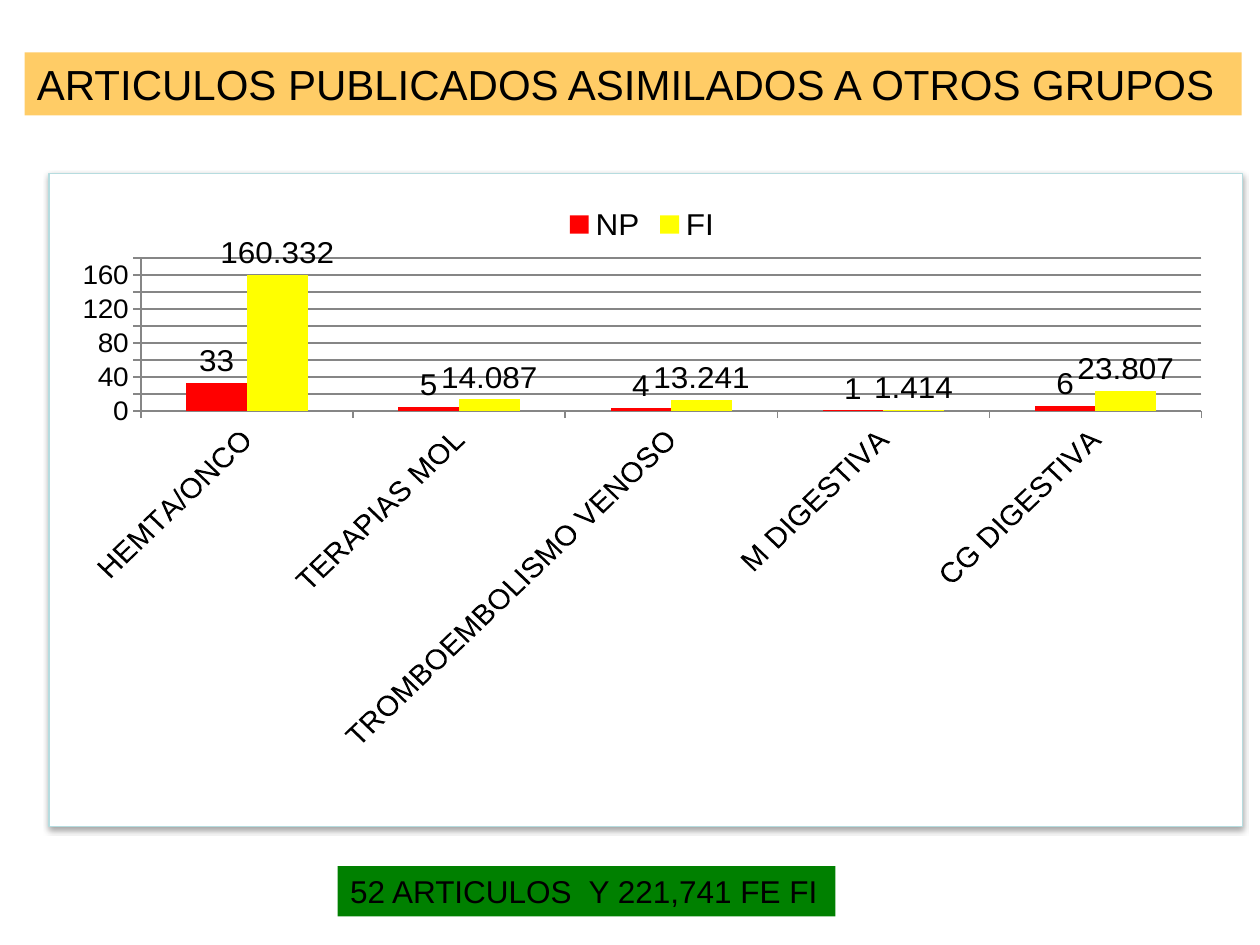
from pptx import Presentation
from pptx.chart.data import CategoryChartData
from pptx.dml.color import RGBColor
from pptx.enum.chart import XL_CHART_TYPE, XL_LABEL_POSITION, XL_LEGEND_POSITION, XL_TICK_MARK
from pptx.enum.shapes import MSO_SHAPE
from pptx.enum.text import MSO_ANCHOR, MSO_AUTO_SIZE, PP_ALIGN
from pptx.oxml import parse_xml
from pptx.oxml.ns import nsdecls, qn
from pptx.util import Inches, Pt

RECTANGLE = MSO_SHAPE.RECTANGLE
COLUMNS = XL_CHART_TYPE.COLUMN_CLUSTERED
OUTSIDE_END = XL_LABEL_POSITION.OUTSIDE_END
LEGEND_TOP = XL_LEGEND_POSITION.TOP
TICK_OUT, TICK_NONE = XL_TICK_MARK.OUTSIDE, XL_TICK_MARK.NONE

WIDTH, HEIGHT = Inches(10), Inches(7.5)
FONT = "Arial"
CATEGORIES = ["HEMTA/ONCO", "TERAPIAS MOL", "TROMBOEMBOLISMO VENOSO",
              "M DIGESTIVA", "CG DIGESTIVA"]
SERIES = {
    "NP": ("FF0000", [33, 5, 4, 1, 6]),
    "FI": ("FFFF00", [160.332, 14.087, 13.241, 1.414, 23.807]),
}


def color(value):
    """Turn a hex string into a color."""
    return RGBColor.from_string(value)


def share_box(left, top, width, height):
    """Turn percentages of the slide's size into a box."""
    return [int(size * share / 100) for size, share in
            ((WIDTH, left), (HEIGHT, top), (WIDTH, width), (HEIGHT, height))]


def set_values(target, values):
    """Set each named attribute of an object."""
    for name, value in values.items():
        setattr(target, name, value)


def set_font(font, size):
    """Give a font the slide's typeface and text color."""
    set_values(font, {"name": FONT, "size": Pt(size)})
    font.color.rgb = color("000000")


def add_rectangle(slide, box, fill):
    """Add a plain filled rectangle."""
    shape = slide.shapes.add_shape(RECTANGLE, *box)
    shape.shadow.inherit = False
    shape.fill.solid()
    shape.fill.fore_color.rgb = color(fill)
    shape.line.fill.background()
    return shape


def add_banner(slide, box, fill, text, size):
    """Add a colored band holding one line of text."""
    shape = add_rectangle(slide, box, fill)
    frame = shape.text_frame
    set_values(frame, {"word_wrap": False, "auto_size": MSO_AUTO_SIZE.SHAPE_TO_FIT_TEXT,
                       "vertical_anchor": MSO_ANCHOR.TOP})
    paragraph = frame.paragraphs[0]
    paragraph.alignment = PP_ALIGN.LEFT
    run = paragraph.add_run()
    run.text = text
    set_font(run.font, size)


def add_panel(slide, box):
    """Add the white panel with a thin border and a soft shadow below."""
    shape = add_rectangle(slide, box, "FFFFFF")
    shape.line.color.rgb = color("B6DCDF")
    shape.line.width = Pt(0.75)
    effects = shape._element.spPr.find(qn("a:effectLst"))
    effects.append(parse_xml(
        f'<a:outerShdw {nsdecls("a")} blurRad="{Pt(3.1)}" dist="{Pt(1.8)}" dir="5400000" '
        'rotWithShape="0"><a:srgbClr val="000000"><a:alpha val="35000"/></a:srgbClr>'
        '</a:outerShdw>'))


def add_articles_chart(slide, box):
    """Add the column chart of articles and impact by group."""
    data = CategoryChartData()
    data.categories = CATEGORIES
    for name, (_, values) in SERIES.items():
        data.add_series(name, values)
    chart = slide.shapes.add_chart(COLUMNS, *box, data).chart
    set_values(chart, {"has_title": False, "has_legend": True})
    set_font(chart.font, 18)
    set_values(chart.legend, {"position": LEGEND_TOP, "include_in_layout": False})

    plot = chart.plots[0]
    set_values(plot, {"gap_width": 150, "overlap": 0, "vary_by_categories": False})
    for series, (fill, _) in zip(plot.series, SERIES.values()):
        series.invert_if_negative = False
        series.format.fill.solid()
        series.format.fill.fore_color.rgb = color(fill)
        set_values(series.data_labels, {"show_value": True, "position": OUTSIDE_END})
        set_font(series.data_labels.font, 18)

    value_axis, category_axis = chart.value_axis, chart.category_axis
    set_values(value_axis, {"minimum_scale": 0, "maximum_scale": 180, "major_unit": 20,
                            "has_major_gridlines": True})
    for axis, size in ((value_axis, 16), (category_axis, 17)):
        set_values(axis, {"major_tick_mark": TICK_OUT, "minor_tick_mark": TICK_NONE})
        set_font(axis.tick_labels.font, size)
    for part in (value_axis, category_axis, value_axis.major_gridlines):
        part.format.line.color.rgb = color("868686")
        part.format.line.width = Pt(0.75)
    category_axis._element.txPr.bodyPr.set("rot", "-2700000")


def main():
    """Build and save the slide."""
    presentation = Presentation()
    set_values(presentation, {"slide_width": WIDTH, "slide_height": HEIGHT})
    slide = presentation.slides.add_slide(presentation.slide_layouts[6])
    add_panel(slide, share_box(3.9, 18.4, 94.7, 69.07))
    add_articles_chart(slide, share_box(4.7, 20.4, 92.5, 59.2))
    add_banner(slide, share_box(1.95, 5.55, 96.6, 6.67), "FFCC66",
               "ARTICULOS PUBLICADOS ASIMILADOS A OTROS GRUPOS", 24)
    add_banner(slide, share_box(26.8, 91.65, 39.5, 5.33), "008000",
               "52 ARTICULOS  Y 221,741 FE FI", 18)
    presentation.save("out.pptx")


if __name__ == "__main__":
    main()
